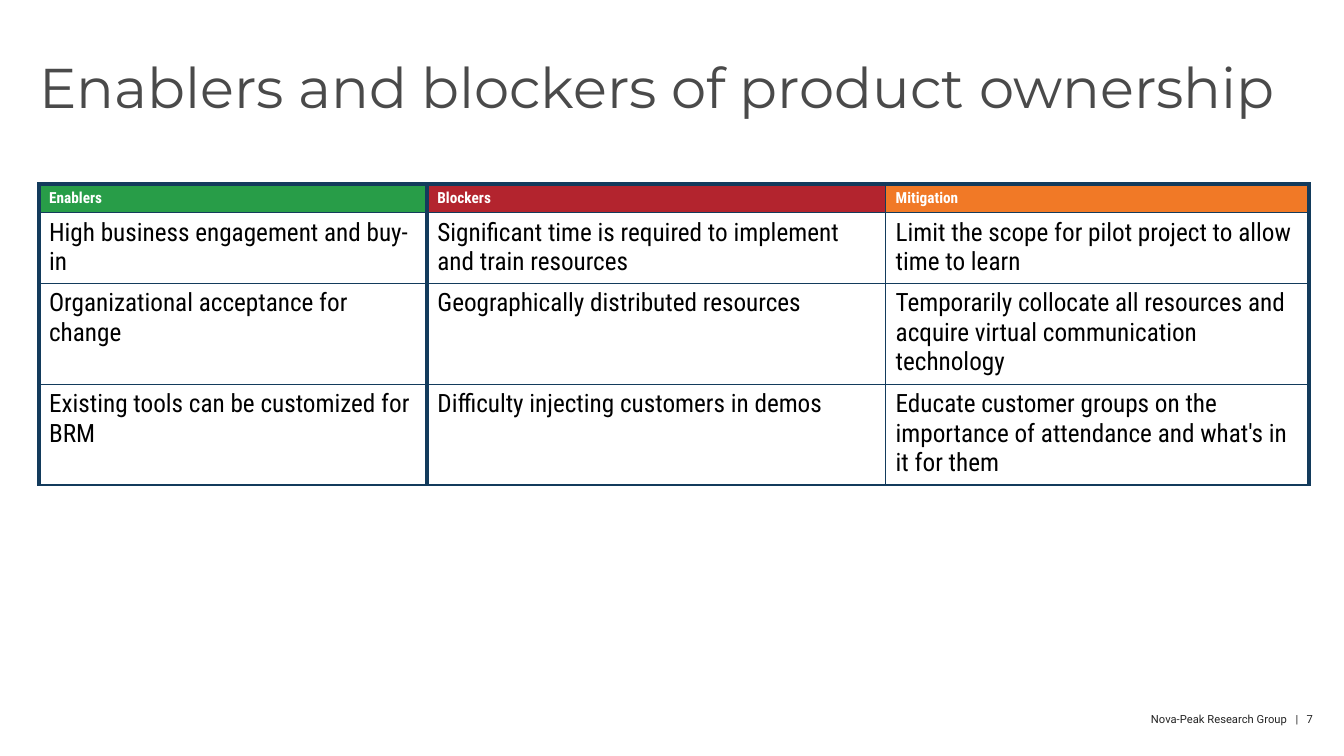
from lxml.etree import SubElement
from pptx import Presentation
from pptx.dml.color import RGBColor
from pptx.enum.text import MSO_ANCHOR as ANCHOR, PP_ALIGN as ALIGN
from pptx.oxml.ns import qn
from pptx.util import Pt

SCALE = 9080
NAVY = "133B5C"
HEADER_FILLS = ["289D48", "B3242E", "F17926"]
COL_WIDTHS = [388, 458, 423]
ROW_HEIGHTS = [28, 69, 99, 99]
EDGE_WIDTHS = [3, 3, 1, 3]
ROWS = [
    ["Enablers", "Blockers", "Mitigation"],
    ["High business engagement and buy-in",
     "Significant time is required to implement and train resources",
     "Limit the scope for pilot project to allow time to learn"],
    ["Organizational acceptance for change",
     "Geographically distributed resources",
     "Temporarily collocate all resources and acquire virtual communication technology"],
    ["Existing tools can be customized for BRM",
     "Difficulty injecting customers in demos",
     "Educate customer groups on the importance of attendance and what's in it for them"],
]


def px(n):
    """Turn pixels into EMU."""
    return n * SCALE


def rgb(color):
    """Turn a hex string into a colour."""
    return RGBColor.from_string(color)


def add_run(p, text, size=18, font="Roboto Condensed", color="000000", bold=False, spacing=0):
    """Add formatted text to a paragraph."""
    r = p.add_run()
    r.text = text
    r.font.size = Pt(size)
    r.font.name = font
    r.font.bold = bold
    r.font.color.rgb = rgb(color)
    if spacing:
        r.font._element.set("spc", str(spacing * 100))


def add_box(s, x, y, w, h, align=ALIGN.LEFT):
    """Add a text box without insets and return its paragraph."""
    tf = s.shapes.add_textbox(px(x), px(y), px(w), px(h)).text_frame
    tf.word_wrap = True
    tf.vertical_anchor = ANCHOR.TOP
    tf.margin_left = tf.margin_right = tf.margin_top = tf.margin_bottom = 0
    p = tf.paragraphs[0]
    p.alignment = align
    return p


def set_borders(cell, **widths):
    """Draw the cell's borders with the given widths in points."""
    tcPr = cell._tc.get_or_add_tcPr()
    for side, width in widths.items():
        ln = SubElement(tcPr, qn(f"a:ln{side}"), w=str(Pt(width)))
        fill = SubElement(ln, qn("a:solidFill"))
        SubElement(fill, qn("a:srgbClr"), val=NAVY)


def add_title(s):
    """Add the slide title."""
    p = add_box(s, 39, 60, 1269, 125)
    p.line_spacing = 0.9
    add_run(p, "Enablers and blockers of product ownership",
            size=40, font="Montserrat", color="4A4A4A")


def add_ownership_table(s):
    """Add the table of enablers, blockers and mitigations."""
    table = s.shapes.add_table(len(ROWS), len(COL_WIDTHS), px(39), px(184),
                               px(sum(COL_WIDTHS)), px(sum(ROW_HEIGHTS))).table
    table.first_row = table.horz_banding = False
    for col, width in zip(table.columns, COL_WIDTHS):
        col.width = px(width)
    for i, texts in enumerate(ROWS):
        table.rows[i].height = px(ROW_HEIGHTS[i])
        header = i == 0
        style = dict(size=10.9, color="FFFFFF", bold=True) if header else {}
        for j, text in enumerate(texts):
            cell = table.cell(i, j)
            set_borders(cell, L=EDGE_WIDTHS[j], R=EDGE_WIDTHS[j + 1], T=3 if header else 1, B=1)
            cell.fill.solid()
            cell.fill.fore_color.rgb = rgb(HEADER_FILLS[j] if header else "FFFFFF")
            add_run(cell.text_frame.paragraphs[0], text, **style)


def add_footer(s):
    """Add the publisher and page number at the lower right."""
    p = add_box(s, 934, 711, 378, 13, align=ALIGN.RIGHT)
    for text, spacing in [("Nova-Peak Research Group", 0), (" ", 4), ("|", 0), (" ", 4), ("7", 0)]:
        add_run(p, text, size=8, font="Roboto", color="242424", spacing=spacing)


def main():
    """Build and save the slide."""
    prs = Presentation()
    prs.slide_width, prs.slide_height = px(1343), px(755)
    s = prs.slides.add_slide(prs.slide_layouts[6])
    add_footer(s)
    add_title(s)
    add_ownership_table(s)
    prs.save("out.pptx")


if __name__ == "__main__":
    main()
